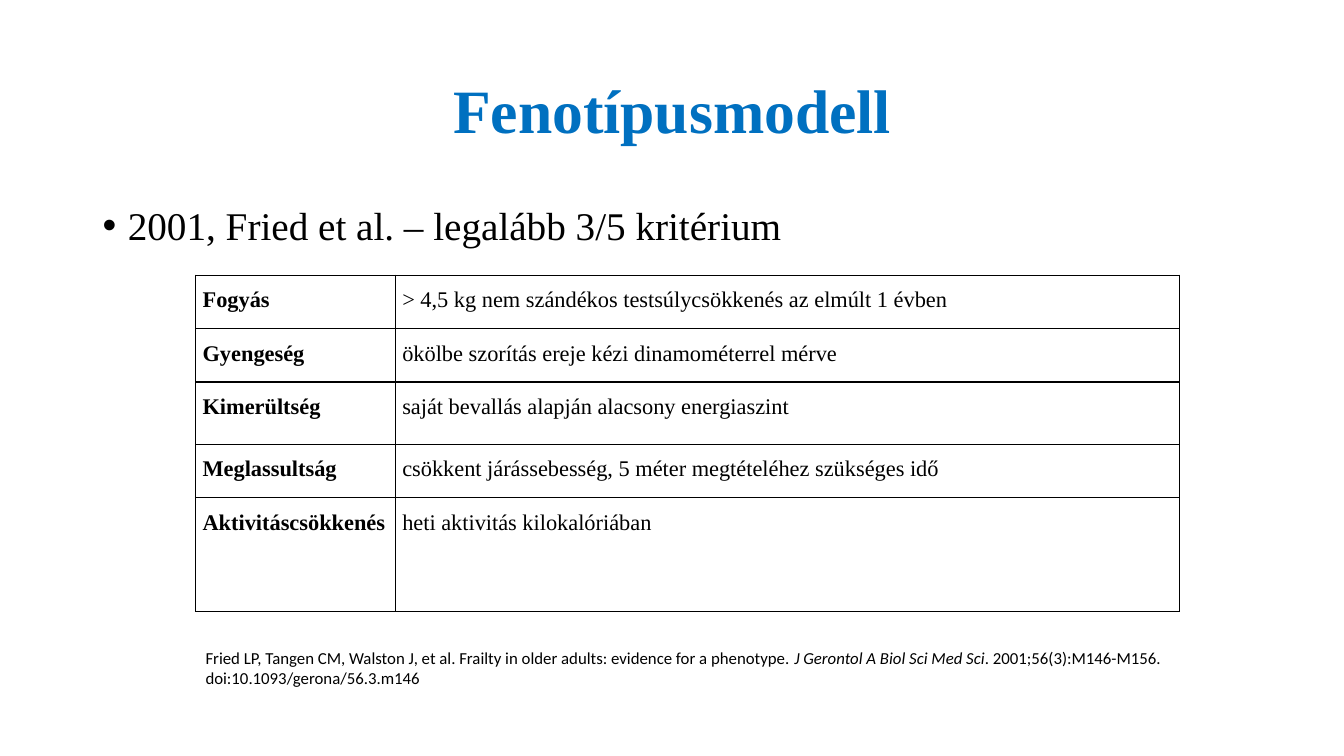
from pptx import Presentation
from pptx.dml.color import RGBColor
from pptx.enum.text import MSO_ANCHOR, PP_ALIGN
from pptx.oxml import parse_xml
from pptx.oxml.ns import nsdecls
from pptx.util import Inches, Pt

BLUE = RGBColor(0x00, 0x70, 0xC0)
BLACK = RGBColor(0x00, 0x00, 0x00)
SERIF = "Times New Roman"

CRITERIA = [
    ("Fogyás", "> 4,5 kg nem szándékos testsúlycsökkenés az elmúlt 1 évben", 0.53),
    ("Gyengeség", "ökölbe szorítás ereje kézi dinamométerrel mérve", 0.53),
    ("Kimerültség", "saját bevallás alapján alacsony energiaszint", 0.62),
    ("Meglassultság", "csökkent járássebesség, 5 méter megtételéhez szükséges idő", 0.53),
    ("Aktivitáscsökkenés", "heti aktivitás kilokalóriában", 1.13),
]
COLUMN_WIDTHS = [1.98, 7.78]


def add_span(para, text, size, font=SERIF, color=BLACK, bold=False, italic=False):
    span = para.add_run()
    span.text = text
    span.font.name = font
    span.font.size = Pt(size)
    span.font.color.rgb = color
    span.font.bold = bold
    span.font.italic = italic


deck = Presentation()
deck.slide_width, deck.slide_height = Inches(13.33), Inches(7.5)
page = deck.slides.add_slide(deck.slide_layouts[5])

# Title
title = page.shapes.title
title.left, title.top = Inches(0.92), Inches(0.4)
title.width, title.height = Inches(11.5), Inches(1.45)
title.text_frame.vertical_anchor = MSO_ANCHOR.MIDDLE
para = title.text_frame.paragraphs[0]
para.alignment = PP_ALIGN.CENTER
para.line_spacing = 0.9
add_span(para, "Fenotípusmodell", 44, color=BLUE, bold=True)

# Bulleted statement
statement = page.shapes.add_textbox(Inches(0.92), Inches(2), Inches(11.5), Inches(0.65))
statement.text_frame.word_wrap = True
para = statement.text_frame.paragraphs[0]
para.line_spacing = 0.9
para.space_before = Pt(10)
add_span(para, "2001, Fried et al. – legalább 3/5 kritérium", 28)
properties = para._p.get_or_add_pPr()
properties.set("marL", str(Inches(0.25)))
properties.set("indent", str(-Inches(0.25)))
properties.append(parse_xml(f'<a:buFont {nsdecls("a")} typeface="Arial"/>'))
properties.append(parse_xml(f'<a:buChar {nsdecls("a")} char="•"/>'))

# Table of criteria
table = page.shapes.add_table(len(CRITERIA), 2, Inches(1.94), Inches(2.73),
                              Inches(9.76), Inches(3.34)).table
table.first_row = False
table.horz_banding = False
for column, width in zip(table.columns, COLUMN_WIDTHS):
    column.width = Inches(width)
for row, (name, description, height) in zip(table.rows, CRITERIA):
    row.height = Inches(height)
    for cell, text in zip(row.cells, (name, description)):
        cell.margin_left = cell.margin_right = Inches(0.07)
        cell.margin_top = cell.margin_bottom = 0
        para = cell.text_frame.paragraphs[0]
        para.alignment = PP_ALIGN.LEFT if text == "Fogyás" else PP_ALIGN.JUSTIFY
        para.line_spacing = 1.5
        para.space_after = Pt(8)
        add_span(para, text, 16, bold=text == name)
        # Borders come before the fill in the cell properties
        for side in ("lnL", "lnR", "lnT", "lnB"):
            cell._tc.get_or_add_tcPr().append(parse_xml(
                f'<a:{side} {nsdecls("a")} w="{Pt(1)}"><a:solidFill>'
                f'<a:srgbClr val="{BLACK}"/></a:solidFill></a:{side}>'))
        cell.fill.background()

# Reference
reference = page.shapes.add_textbox(Inches(1.94), Inches(6.38), Inches(9.76), Inches(0.5))
reference.text_frame.word_wrap = True
para = reference.text_frame.paragraphs[0]
for text, italic in [
    ("Fried LP, Tangen CM, Walston J, et al. Frailty in older adults: "
     "evidence for a phenotype. ", False),
    ("J Gerontol A Biol Sci Med Sci", True),
    (". 2001;56(3):M146-M156. doi:10.1093/gerona/56.3.m146", False),
]:
    add_span(para, text, 12, font="Calibri", italic=italic)

deck.save("out.pptx")
